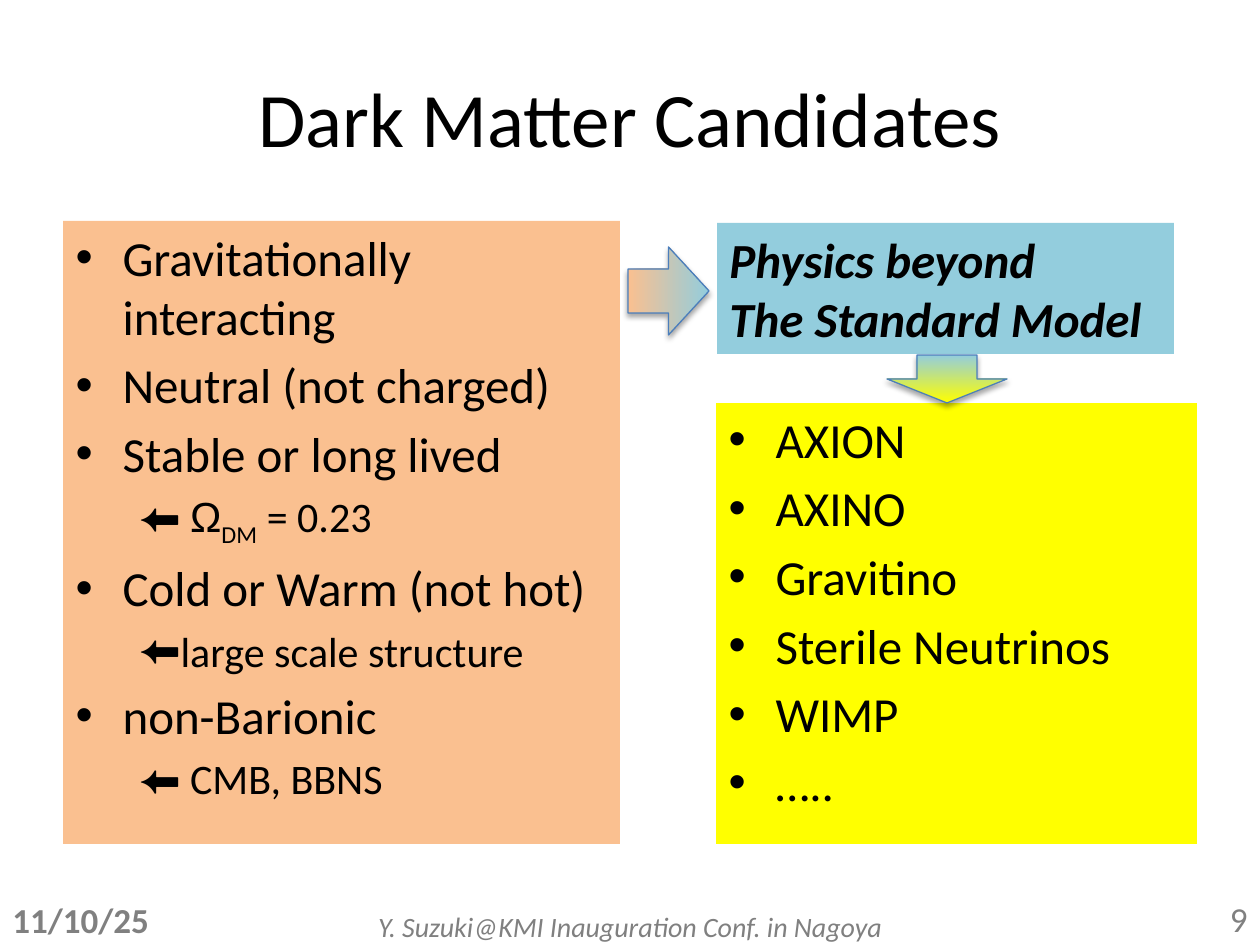
from dataclasses import dataclass

from lxml import etree
from pptx import Presentation
from pptx.dml.color import RGBColor
from pptx.enum.shapes import MSO_SHAPE
from pptx.enum.text import MSO_ANCHOR, MSO_AUTO_SIZE, PP_ALIGN
from pptx.oxml.ns import qn
from pptx.util import Emu, Pt

RIGHT_ARROW, DOWN_ARROW = MSO_SHAPE.RIGHT_ARROW, MSO_SHAPE.DOWN_ARROW
LEFT, CENTER, RIGHT = PP_ALIGN.LEFT, PP_ALIGN.CENTER, PP_ALIGN.RIGHT
TOP, MIDDLE = MSO_ANCHOR.TOP, MSO_ANCHOR.MIDDLE
FIXED, GROW = MSO_AUTO_SIZE.NONE, MSO_AUTO_SIZE.SHAPE_TO_FIT_TEXT
PX_PER_INCH = 126
TWO_CONTENT = 3


@dataclass(frozen=True)
class Theme:
    font: str = "Calibri"
    symbol_font: str = "Arial"
    ink: str = "000000"
    muted: str = "808080"
    properties: str = "FAC090"
    physics: str = "93CDDD"
    candidates: str = "FFFF00"
    outline: str = "4B7EBC"
    title: int = 44
    item: int = 28
    reason: int = 24
    footer: int = 20
    venue: int = 16


THEME = Theme()


@dataclass(frozen=True)
class Box:
    left: int
    top: int
    width: int
    height: int


@dataclass(frozen=True)
class Phrase:
    """A stretch of text that may differ in font or baseline."""
    text: str
    font: str = THEME.font
    baseline: int = 0


@dataclass(frozen=True)
class Item:
    phrases: tuple[Phrase, ...]
    level: int = 0
    margin: int = 47
    indent: int = -47
    bullet: str = "•"


@dataclass(frozen=True)
class BlockArrow:
    kind: int
    box: Box
    start: str
    end: str
    angle: int


@dataclass(frozen=True)
class Footer:
    text: str
    box: Box
    align: int
    size: int = THEME.footer
    bold: bool = False
    italic: bool = False


def px(length: int) -> Emu:
    return Emu(round(length * 914400 / PX_PER_INCH))


def place(shape, box: Box) -> None:
    shape.left, shape.top = px(box.left), px(box.top)
    shape.width, shape.height = px(box.width), px(box.height)


def paint(fill, color: str) -> None:
    fill.solid()
    fill.fore_color.rgb = RGBColor.from_string(color)


def write(paragraph, text: str, *, size: int, font: str = THEME.font,
          color: str = THEME.ink, bold: bool = False, italic: bool = False,
          baseline: int = 0) -> None:
    run = paragraph.add_run()
    run.text = text
    run.font.name, run.font.size = font, Pt(size)
    run.font.bold, run.font.italic = bold, italic
    run.font.color.rgb = RGBColor.from_string(color)
    if baseline:
        run._r.get_or_add_rPr().set("baseline", str(baseline * 1000))


def paragraphs(frame, count: int) -> list:
    return [frame.paragraphs[0], *(frame.add_paragraph() for _ in range(count - 1))]


def plain(text: str) -> Item:
    return Item((Phrase(text),))


def reason(*phrases: Phrase) -> Item:
    """A second-level line whose arrow belongs to the text."""
    return Item(phrases, level=1, margin=63, indent=0, bullet="")


def fill_list(body, box: Box, color: str, items: list[Item]) -> None:
    place(body, box)
    paint(body.fill, color)
    frame = body.text_frame
    frame.auto_size, frame.vertical_anchor = FIXED, TOP
    for item, line in zip(items, paragraphs(frame, len(items))):
        line.level = item.level
        if item is items[0]:
            line.space_before = Pt(0)
        properties = line._p.get_or_add_pPr()
        properties.set("marL", str(px(item.margin)))
        properties.set("indent", str(px(item.indent)))
        if item.bullet:
            etree.SubElement(properties, qn("a:buChar"), char=item.bullet)
        else:
            etree.SubElement(properties, qn("a:buNone"))
        size = THEME.reason if item.level else THEME.item
        for phrase in item.phrases:
            write(line, phrase.text, size=size, font=phrase.font,
                  baseline=phrase.baseline)


def add_text(slide, box: Box, lines: list[str], *, align: int = LEFT,
             anchor: int = TOP, wrap: bool = True, fit: int = FIXED, **style):
    area = slide.shapes.add_textbox(*map(px, (box.left, box.top, box.width, box.height)))
    frame = area.text_frame
    frame.word_wrap, frame.auto_size, frame.vertical_anchor = wrap, fit, anchor
    for text, line in zip(lines, paragraphs(frame, len(lines))):
        line.alignment = align
        write(line, text, **style)
    return area


def add_block_arrow(slide, arrow: BlockArrow) -> None:
    box = arrow.box
    shape = slide.shapes.add_shape(
        arrow.kind, *map(px, (box.left, box.top, box.width, box.height)))
    shape.fill.gradient()
    shape.fill.gradient_angle = arrow.angle
    for stop, position, color in zip(shape.fill.gradient_stops, (0, 1),
                                     (arrow.start, arrow.end)):
        stop.position = position
        stop.color.rgb = RGBColor.from_string(color)
    paint(shape.line.fill, THEME.outline)
    shape.line.width = Pt(0.75)
    shape.shadow.inherit = False
    effects = shape._element.spPr.find(qn("a:effectLst"))
    shadow = etree.SubElement(effects, qn("a:outerShdw"), blurRad=str(Pt(3.1)),
                              dist=str(Pt(1.8)), dir="5400000", rotWithShape="0")
    black = etree.SubElement(shadow, qn("a:srgbClr"), val=THEME.ink)
    etree.SubElement(black, qn("a:alpha"), val="35000")


PROPERTIES = [
    plain("Gravitationally interacting"),
    plain("Neutral (not charged)"),
    plain("Stable or long lived"),
    reason(Phrase("⬅ "), Phrase("Ω", THEME.symbol_font), Phrase("DM", baseline=-25),
           Phrase(" = 0.23")),
    plain("Cold or Warm (not hot)"),
    Item((Phrase("large scale structure"),), level=1, margin=102, indent=-39, bullet="⬅"),
    plain("non-Barionic"),
    reason(Phrase("⬅ CMB, BBNS")),
]
CANDIDATES = [plain(name) for name in
              ("AXION", "AXINO", "Gravitino", "Sterile Neutrinos", "WIMP", "…..")]
ARROWS = [
    BlockArrow(RIGHT_ARROW, Box(628, 247, 81, 88), THEME.properties, THEME.physics, 0),
    BlockArrow(DOWN_ARROW, Box(887, 355, 120, 48), THEME.physics, THEME.candidates, 270),
]
FOOTERS = [
    Footer("11/10/25", Box(0, 895, 294, 50), LEFT, bold=True),
    Footer("Y. Suzuki@KMI Inauguration Conf. in Nagoya", Box(294, 909, 672, 35), CENTER,
           size=THEME.venue, italic=True),
    Footer("9", Box(966, 894, 294, 50), RIGHT),
]


def main() -> None:
    deck = Presentation()
    deck.slide_width, deck.slide_height = px(1260), px(945)
    slide = deck.slides.add_slide(deck.slide_layouts[TWO_CONTENT])
    title, properties, candidates = slide.placeholders

    place(title, Box(63, 38, 1134, 158))
    title.text_frame.vertical_anchor = MIDDLE
    heading = title.text_frame.paragraphs[0]
    heading.alignment = CENTER
    write(heading, "Dark Matter Candidates", size=THEME.title)

    fill_list(properties, Box(63, 221, 557, 623), THEME.properties, PROPERTIES)
    fill_list(candidates, Box(716, 403, 481, 441), THEME.candidates, CANDIDATES)
    for footer in FOOTERS:
        add_text(slide, footer.box, [footer.text], align=footer.align, anchor=MIDDLE,
                 size=footer.size, bold=footer.bold, italic=footer.italic,
                 color=THEME.muted)
    physics = add_text(slide, Box(717, 223, 457, 131),
                       ["Physics beyond", "The Standard Model"], wrap=False, fit=GROW,
                       size=THEME.item, bold=True, italic=True)
    paint(physics.fill, THEME.physics)
    for arrow in ARROWS:
        add_block_arrow(slide, arrow)
    deck.save("out.pptx")


if __name__ == "__main__":
    main()
